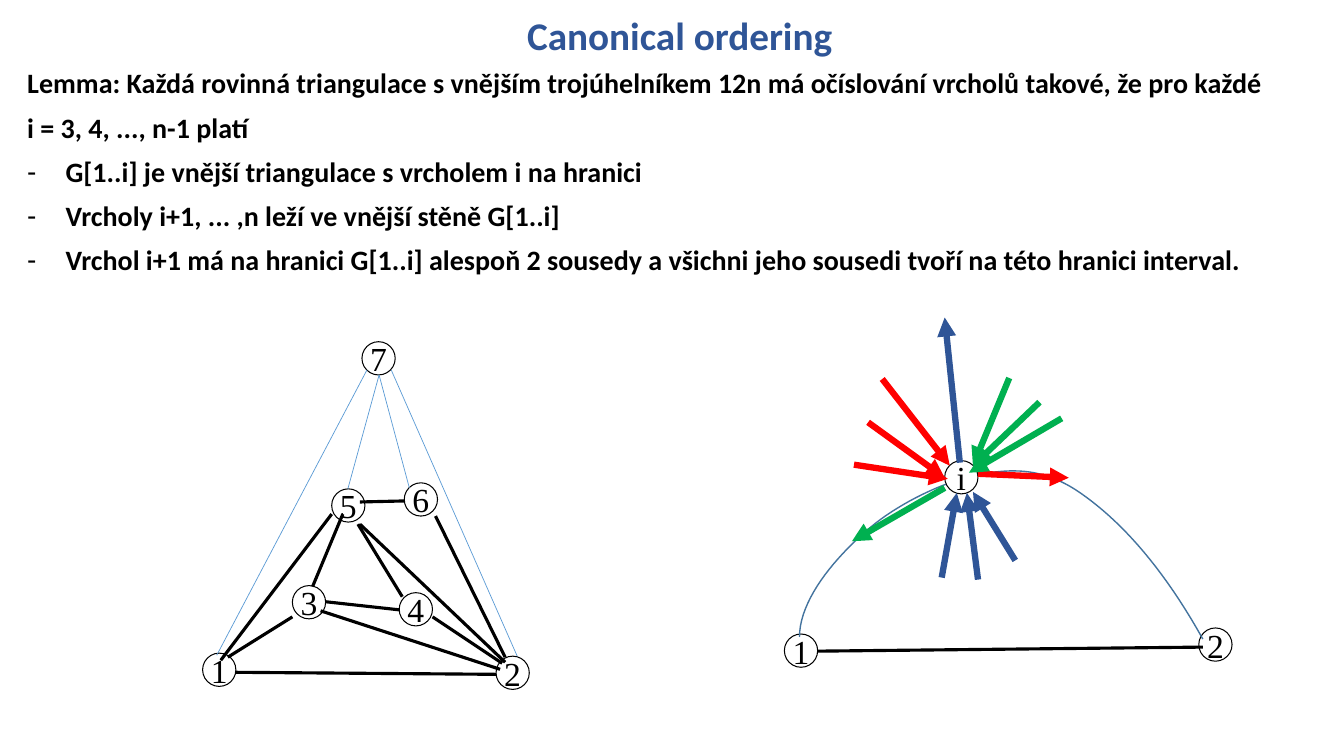
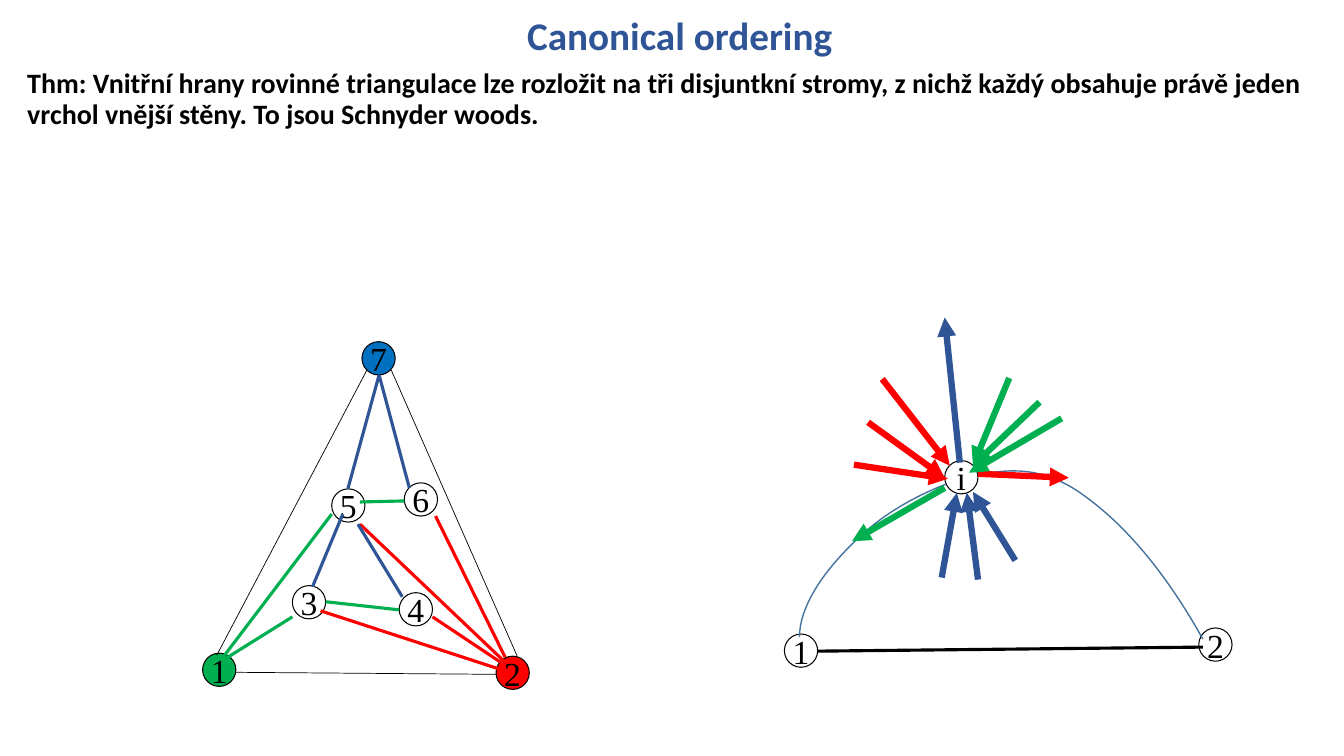
"""Build two slides on canonical ordering of planar triangulations."""
from lxml import etree
from pptx import Presentation, util as u
from pptx.dml.color import RGBColor
from pptx.enum import shapes, text
from pptx.oxml.ns import qn

BLACK, WHITE, BLUE, GREEN, RED = "000000", "FFFFFF", "2F5597", "00B050", "FF0000"
SKY, ARC, DISC = "5B9BD5", "43739E", "0070C0"
SIZE = 0.33

TITLE = "Canonical ordering"
LEMMA = [
    ("Lemma: Každá rovinná triangulace s vnějším trojúhelníkem 12n má "
     "očíslování vrcholů takové, že pro každé", False),
    ("i = 3, 4, ..., n-1 platí", False),
    ("G[1..i] je vnější triangulace s vrcholem i na hranici", True),
    ("Vrcholy i+1, ... ,n leží ve vnější stěně G[1..i]", True),
    ("Vrchol i+1 má na hranici G[1..i] alespoň 2 sousedy a všichni jeho "
     "sousedi tvoří na této hranici interval.", True),
]
THEOREM = [
    ("Thm: Vnitřní hrany rovinné triangulace lze rozložit na tři disjuntkní "
     "stromy, z nichž každý obsahuje právě jeden vrchol vnější stěny. "
     "To jsou Schnyder woods.", False),
]

INNER = [("3", 2.9, 5.81), ("5", 3.29, 4.85), ("6", 4.01, 4.79), ("4", 3.96, 5.88)]
OUTER = [("7", 3.59, 3.39), ("1", 2.01, 6.48), ("2", 4.92, 6.51)]
ENDS = [("1", 7.78, 6.29), ("2", 11.89, 6.23)]
HUB = [("i", 9.37, 4.57)]

EDGES = {
    "left": [(2.9, 6.12, 2.26, 6.52), (3.23, 5.97, 3.96, 6.05),
             (3.57, 4.98, 4.01, 4.97), (3.29, 5.1, 2.19, 6.55)],
    "right": [(4.29, 6.12, 4.98, 6.58), (5.01, 6.52, 4.32, 5.12),
              (3.18, 6.06, 4.96, 6.64), (3.57, 5.2, 5.01, 6.57)],
    "up": [(3.4, 5.1, 3.1, 5.82), (3.55, 5.2, 3.99, 5.92)],
    "stem": [(3.45, 4.85, 3.76, 3.72), (4.06, 4.84, 3.76, 3.72)],
    "side": [(2.15, 6.5, 3.64, 3.67), (5.13, 6.51, 3.88, 3.67)],
    "base": [(2.34, 6.67, 4.92, 6.69)],
    "floor": [(8.11, 6.46, 11.93, 6.42)],
}
BOLD, THIN = (BLACK, 2.25), (SKY, 0.5)
PLAIN = dict.fromkeys(EDGES, BOLD) | {"stem": THIN, "side": THIN}
WOODS = {"left": (GREEN, 2.25), "right": (RED, 2.25), "up": (BLUE, 2.25),
         "stem": (BLUE, 2.25), "side": (BLACK, 0.5), "base": (BLACK, 0.5),
         "floor": BOLD}

ARROWS = [
    (GREEN, [(9.37, 4.84, 8.45, 5.37)]),
    (RED, [(9.7, 4.7, 10.6, 4.74)]),
    (BLUE, [(9.34, 5.73, 9.49, 4.89), (9.52, 4.59, 9.37, 3.15),
            (10.07, 5.56, 9.65, 4.88)]),
    (RED, [(8.47, 4.61, 9.4, 4.75), (8.61, 4.19, 9.37, 4.74),
           (8.75, 3.76, 9.42, 4.62)]),
    (GREEN, [(10.53, 4.15, 9.61, 4.69), (10.31, 3.99, 9.65, 4.62),
             (10.01, 3.75, 9.65, 4.62)]),
    (BLUE, [(9.7, 5.75, 9.59, 4.89)]),
]
CURVE = [(7.93, 6.32), (7.93, 5.95), (8.28, 5.54), (8.59, 5.27), (8.89, 5),
         (9.39, 4.76), (9.75, 4.7), (10.11, 4.64), (10.41, 4.66),
         (10.77, 4.93), (11.14, 5.2), (11.54, 5.64), (11.93, 6.34)]

SLIDES = [
    (LEMMA, PLAIN, {}),
    (THEOREM, WOODS, {"7": DISC, "1": GREEN, "2": RED}),
]


def tint(hue):
    return RGBColor.from_string(hue)


def style(run, face, size, hue, bold):
    font = run.font
    font.name, font.size, font.bold = face, u.Pt(size), bold
    font.color.rgb = tint(hue)


def place(box, *spot):
    box.left, box.top, box.width, box.height = map(u.Inches, spot)
    box.text_frame.auto_size = text.MSO_AUTO_SIZE.NONE


def dash(para):
    props = para._p.get_or_add_pPr()
    props.set("marL", str(u.Inches(0.38)))
    props.set("indent", str(-u.Inches(0.38)))
    etree.SubElement(props, qn("a:buFontTx"))
    etree.SubElement(props, qn("a:buChar"), char="-")


def write(slide, lines):
    head, body = slide.placeholders
    place(head, 1.74, 0.03, 10, 0.61)
    head.text_frame.text = TITLE
    head.text_frame.vertical_anchor = text.MSO_ANCHOR.BOTTOM
    para = head.text_frame.paragraphs[0]
    para.alignment, para.line_spacing = text.PP_ALIGN.CENTER, 0.9
    style(para.runs[0], "Calibri", 28, BLUE, True)
    place(body, 0.17, 0.64, 12.99, 6.72)
    frame = body.text_frame
    frame.text = "\n".join(line for line, _ in lines)
    for para, (_, item) in zip(frame.paragraphs, lines):
        para.alignment, para.line_spacing = text.PP_ALIGN.LEFT, 0.9
        para.space_before = u.Pt(10)
        style(para.runs[0], "Calibri", 20, BLACK, True)
        if item:
            dash(para)


def nodes(slide, group, fills):
    for name, x, y in group:
        node = slide.shapes.add_shape(
            shapes.MSO_SHAPE.OVAL, *map(u.Inches, (x, y, SIZE, SIZE)))
        node.shadow.inherit = False
        node.fill.solid()
        node.fill.fore_color.rgb = tint(fills.get(name, WHITE))
        node.line.color.rgb, node.line.width = tint(BLACK), u.Pt(0.75)
        frame = node.text_frame
        frame.text, frame.word_wrap = name, False
        frame.vertical_anchor = text.MSO_ANCHOR.MIDDLE
        para = frame.paragraphs[0]
        para.alignment = text.PP_ALIGN.CENTER
        style(para.runs[0], "Times New Roman", 24, BLACK, False)


def lines(slide, group, hue, width, arrow=False):
    for ends in group:
        line = slide.shapes.add_connector(
            shapes.MSO_CONNECTOR.STRAIGHT, *map(u.Inches, ends))
        line.line.color.rgb, line.line.width = tint(hue), u.Pt(width)
        if arrow:
            etree.SubElement(line.line._get_or_add_ln(), qn("a:tailEnd"),
                             type="triangle")
        etree.SubElement(line._element.spPr, qn("a:effectLst"))


def bend(ctrl, t):
    s = 1 - t
    parts = (s ** 3, 3 * s * s * t, 3 * s * t * t, t ** 3)
    return tuple(u.Inches(sum(p * c for p, c in zip(parts, axis)))
                 for axis in zip(*ctrl))


def arc(slide, steps=20):
    dots = [bend(CURVE[k:k + 4], n / steps)
            for k in range(0, len(CURVE) - 1, 3) for n in range(1, steps + 1)]
    pen = slide.shapes.build_freeform(*map(u.Inches, CURVE[0]))
    pen.add_line_segments(dots, close=False)
    shape = pen.convert_to_shape()
    shape.shadow.inherit = False
    shape.fill.background()
    shape.line.color.rgb, shape.line.width = tint(ARC), u.Pt(1)


def main():
    deck = Presentation()
    deck.slide_width, deck.slide_height = u.Inches(13.33), u.Inches(7.5)
    for words, looks, fills in SLIDES:
        slide = deck.slides.add_slide(deck.slide_layouts[0])
        write(slide, words)
        nodes(slide, INNER + OUTER, fills)
        nodes(slide, ENDS, {})
        for kind, group in EDGES.items():
            lines(slide, group, *looks[kind])
        arc(slide)
        nodes(slide, HUB, {})
        for hue, group in ARROWS:
            lines(slide, group, hue, 4.5, True)
    deck.save("out.pptx")


if __name__ == "__main__":
    main()
